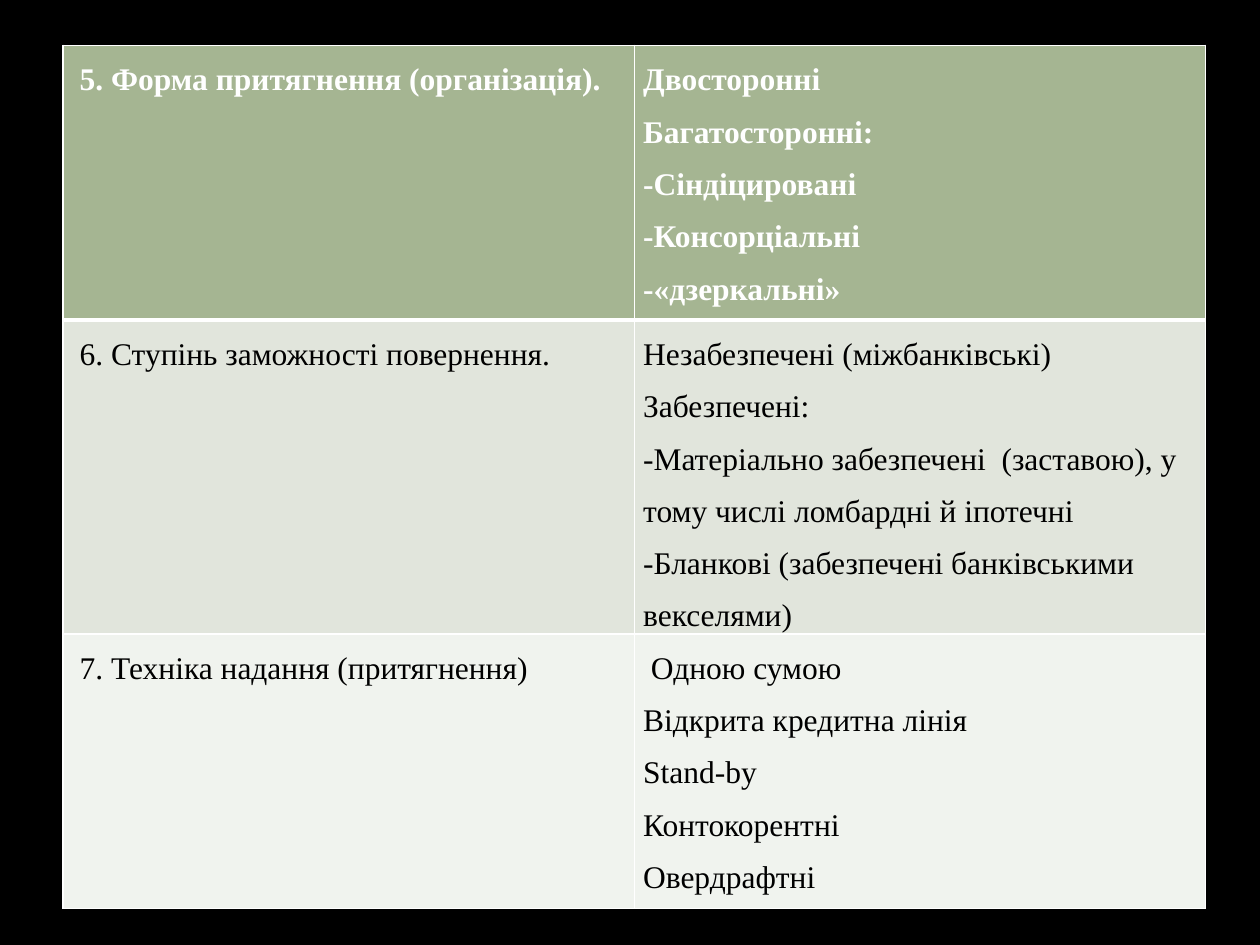
from dataclasses import dataclass

from lxml.etree import SubElement
from pptx import Presentation
from pptx.dml.color import RGBColor as RGB
from pptx.oxml.ns import qn
from pptx.util import Inches, Pt


@dataclass(frozen=True)
class Theme:
    """Colours, type and line widths of the slide."""
    background: str = "000000"
    border: str = "FFFFFF"
    header_text: str = "FFFFFF"
    body_text: str = "000000"
    row_fills: tuple = ("A5B592", "E1E5DC", "F0F3EE")
    font: str = "Times New Roman"
    size: int = 18
    line_spacing: float = 1.5
    thin: int = 1
    thick: int = 3


THEME = Theme()

CREDIT_TYPES = [
    (" 5. Форма притягнення (організація).",
     ["Двосторонні", "Багатосторонні:", "-Сіндіцировані",
      "-Консорціальні", "-«дзеркальні»"]),
    (" 6. Ступінь заможності повернення.",
     ["Незабезпечені (міжбанківські)", "Забезпечені:",
      "-Матеріально забезпечені  (заставою), у тому числі ломбардні й іпотечні",
      "-Бланкові (забезпечені банківськими векселями)"]),
    (" 7. Техніка надання (притягнення)",
     [" Одною сумою", "Відкрита кредитна лінія", "Stand-by",
      "Контокорентні", "Овердрафтні"]),
]


def set_borders(cell, top, bottom):
    """Draw the four borders of a cell, with the given top and bottom widths."""
    tc_pr = cell._tc.get_or_add_tcPr()
    widths = {"lnL": THEME.thin, "lnR": THEME.thin, "lnT": top, "lnB": bottom}
    for tag, width in widths.items():
        ln = SubElement(tc_pr, qn(f"a:{tag}"), w=str(Pt(width)))
        fill = SubElement(ln, qn("a:solidFill"))
        SubElement(fill, qn("a:srgbClr"), val=THEME.border)


def fill_cell(cell, lines, row):
    """Write the lines into a cell and style it for its row."""
    header = row == 0
    set_borders(cell, THEME.thick if row == 1 else THEME.thin,
                THEME.thick if header else THEME.thin)
    cell.fill.solid()
    cell.fill.fore_color.rgb = RGB.from_string(THEME.row_fills[row])
    cell.margin_left = cell.margin_right = Inches(0.07)
    cell.margin_top = cell.margin_bottom = 0
    tf = cell.text_frame
    tf.text = "\n".join(lines)
    for p in tf.paragraphs:
        p.line_spacing = THEME.line_spacing
        for r in p.runs:
            r.font.name = THEME.font
            r.font.size = Pt(THEME.size)
            r.font.bold = header
            r.font.color.rgb = RGB.from_string(
                THEME.header_text if header else THEME.body_text)


def add_credit_table(s, left, top, width, height):
    """Add the table of credit types in the given box."""
    table = s.shapes.add_table(len(CREDIT_TYPES), 2, left, top, width, height).table
    for row, (feature, kinds) in enumerate(CREDIT_TYPES):
        fill_cell(table.cell(row, 0), [feature], row)
        fill_cell(table.cell(row, 1), kinds, row)


def main():
    """Build the slide and save it."""
    prs = Presentation()
    prs.slide_width, prs.slide_height = Inches(10), Inches(7.5)
    s = prs.slides.add_slide(prs.slide_layouts[6])
    s.background.fill.solid()
    s.background.fill.fore_color.rgb = RGB.from_string(THEME.background)
    add_credit_table(s, Inches(0.5), Inches(0.36), Inches(9.07), Inches(6.54))
    prs.save("out.pptx")


if __name__ == "__main__":
    main()
